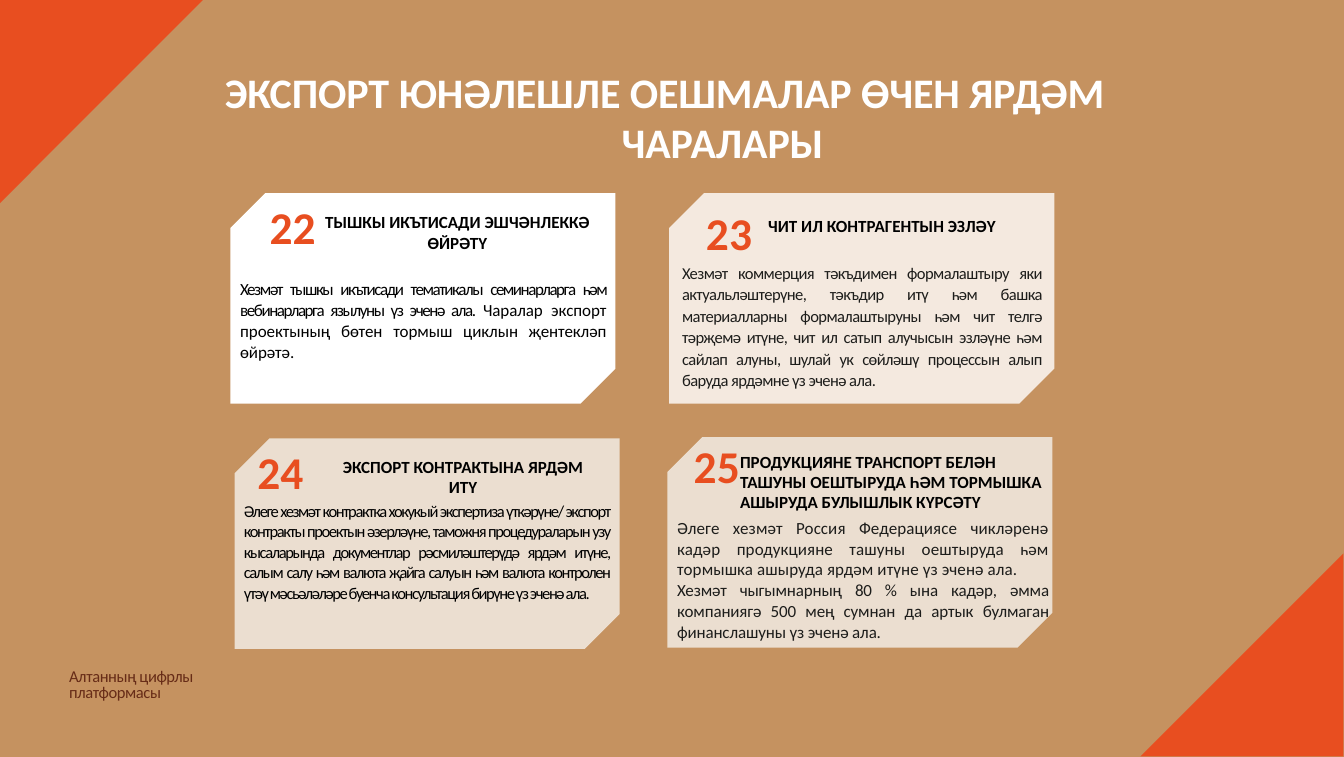
from pptx import Presentation
from pptx import util as u
from pptx.dml.color import RGBColor
from pptx.enum import shapes, text

PX = 9144  # 100 px to the inch
WIDE, HIGH = 2199, 1238

TAN = RGBColor(0xC5, 0x92, 0x60)
FLAME = RGBColor(0xE8, 0x4E, 0x20)
WHITE = RGBColor(0xFF, 0xFF, 0xFF)
CREAM = RGBColor(0xF4, 0xE9, 0xDF)
SAND = RGBColor(0xEB, 0xDE, 0xD0)
BLACK = RGBColor(0x00, 0x00, 0x00)
INK = RGBColor(0x1D, 0x1D, 0x1B)
BROWN = RGBColor(0x67, 0x2C, 0x17)

LEFT, MID, JUST = text.PP_ALIGN.LEFT, text.PP_ALIGN.CENTER, text.PP_ALIGN.JUSTIFY


def write(frame, paras, size=20, color=BLACK, bold=False, align=LEFT,
          line=None, before=0, inset=(0, 0), lead=1, hang=0):
    """Fill a frame; each paragraph is a list of (words, letter spacing in pt)."""
    frame.word_wrap = True
    frame.auto_size = text.MSO_AUTO_SIZE.NONE
    frame.vertical_anchor = text.MSO_ANCHOR.TOP
    frame.margin_left = frame.margin_right = inset[0] * PX
    frame.margin_top = frame.margin_bottom = inset[1] * PX
    for i, runs in enumerate(paras):
        para = frame.add_paragraph() if i else frame.paragraphs[0]
        para.alignment = align
        para.space_before = u.Pt(before)
        if line:
            para.line_spacing = line
        props = para._p.get_or_add_pPr()
        props.set("marL", str(lead * PX))
        props.set("indent", str(-hang * PX))
        for words, gap in runs:
            run = para.add_run()
            run.text = words
            font = run.font
            font.name, font.size, font.bold = "Calibri", u.Pt(size), bold
            font.color.rgb = color
            run._r.get_or_add_rPr().set("spc", str(round(gap * 100)))


class Deck:
    def __init__(self):
        self.file = Presentation()
        self.file.slide_width, self.file.slide_height = WIDE * PX, HIGH * PX
        self.slide = self.file.slides.add_slide(self.file.slide_layouts[5])
        back = self.slide.background.fill
        back.solid()
        back.fore_color.rgb = TAN

    def shape(self, kind, box, color):
        item = self.slide.shapes.add_shape(kind, *(n * PX for n in box))
        item.shadow.inherit = False
        item.fill.solid()
        item.fill.fore_color.rgb = color
        item.line.fill.background()
        return item

    def corner(self, left, top, side, turn):
        item = self.shape(shapes.MSO_SHAPE.RIGHT_TRIANGLE,
                          (left, top, side, side), FLAME)
        item.rotation = turn

    def panel(self, left, top, color):
        item = self.shape(shapes.MSO_SHAPE.SNIP_2_DIAG_RECTANGLE,
                          (left, top, 630, 344), color)
        item.adjustments[0] = 57 / 344
        item.adjustments[1] = 0

    def title(self, box, words, **style):
        item = self.slide.shapes.title
        item.left, item.top, item.width, item.height = (n * PX for n in box)
        write(item.text_frame, [[(words, -0.1)]], **style)

    def label(self, box, paras, **style):
        item = self.slide.shapes.add_textbox(*(n * PX for n in box))
        write(item.text_frame, paras, **style)

    def card(self, spot, color, num, mark, head, body):
        self.panel(*spot, color)
        self.label((*mark, 79, 92), [[(num, 0.2)]], size=53.5, color=FLAME,
                   bold=True, before=1, inset=(0, 1))
        box, words, style = head
        self.label(box, [[(words, 0)]], bold=True, **style)
        box, paras, style = body
        self.label(box, paras, align=JUST, **style)


# Each card: panel spot, colour, number, number spot, heading, body
CARDS = [
    ((377, 316), WHITE, "22", (440, 325),
     ((530, 345, 436, 70), "ТЫШКЫ ИКЪТИСАДИ ЭШЧӘНЛЕККӘ ӨЙРӘТҮ",
      dict(align=MID, line=1.04)),
     ((392, 455, 600, 138),
      [[("Хезмәт тышкы икътисади тематикалы семинарларга һәм вебинарларга "
         "язылуны үз эченә ала. ", -1.7),
        ("Чаралар экспорт проектының бөтен тормыш циклын җентекләп өйрәтә.", -0.1)]],
      dict(line=1.03))),
    ((1095, 316), CREAM, "23", (1154, 334),
     ((1256, 349, 406, 38), "ЧИТ ИЛ КОНТРАГЕНТЫН ЭЗЛӘҮ",
      dict(before=3, inset=(0, 4))),
     ((1115, 426, 590, 212),
      [[("Хезмәт коммерция тәкъдимен формалаштыру яки актуальләштерүне, тәкъдир "
         "итү һәм башка материалларны формалаштыруны һәм чит телгә тәрҗемә итүне, "
         "чит ил сатып алучысын эзләүне һәм сайлап алуны, шулай ук сөйләшү "
         "процессын алып баруда ярдәмне үз эченә ала.", -0.7)]],
      dict(size=19.5, color=INK, line=1.08, before=0.8, inset=(0, 1)))),
    ((384, 717), SAND, "24", (420, 725),
     ((525, 741, 465, 44), "ЭКСПОРТ КОНТРАКТЫНА ЯРДӘМ ИТҮ",
      dict(align=MID, inset=(10, 5), lead=0)),
     ((398, 818, 600, 168),
      [[("Әлеге хезмәт контрактка хокукый экспертиза үткәрүне/ экспорт контракты "
         "проектын әзерләүне, таможня процедураларын узу кысаларында документлар "
         "рәсмиләштерүдә ярдәм итүне, салым салу һәм валюта җайга салуын һәм валюта "
         "контролен үтәү мәсьәләләре буенча консультация бирүне үз эченә ала.", -1.7)]],
      dict(size=19.5, line=1.03))),
    ((1092, 715), SAND, "25", (1134, 715),
     ((1201, 733, 516, 111), "ПРОДУКЦИЯНЕ ТРАНСПОРТ БЕЛӘН ТАШУНЫ ОЕШТЫРУДА ҺӘМ "
      "ТОРМЫШКА АШЫРУДА БУЛЫШЛЫК КҮРСӘТҮ", dict(inset=(10, 5), lead=0)),
     ((1107, 846, 609, 206),
      [[("Әлеге хезмәт Россия Федерациясе чикләренә кадәр продукцияне ташуны "
         "оештыруда һәм тормышка ашыруда ярдәм итүне үз эченә ала.", 0.1)],
       [("Хезмәт чыгымнарның 80 % ына кадәр, әмма компаниягә 500 мең сумнан да "
         "артык булмаган финанслашуны үз эченә ала.", -0.2)]],
      dict(color=INK, line=1.01, before=0.9))),
]


def main():
    deck = Deck()

    # Corners
    deck.corner(0, 0, 332, 90)
    deck.corner(WIDE - 333, HIGH - 333, 332, 270)

    # Heading
    deck.title((367, 107, 1740, 168),
               "ЭКСПОРТ ЮНӘЛЕШЛЕ ОЕШМАЛАР ӨЧЕН ЯРДӘМ ЧАРАЛАРЫ",
               size=49.5, color=WHITE, bold=True, line=1.0, before=0.8,
               inset=(0, 1), lead=650, hang=649)

    # Cards
    for card in CARDS:
        deck.card(*card)

    # Footer
    deck.label((112, 1094, 241, 55), [[("Алтанның цифрлы платформасы", -0.5)]],
               size=19.5, color=BROWN, line=u.Pt(19.2), inset=(0, 1))

    deck.file.save("out.pptx")


if __name__ == "__main__":
    main()
